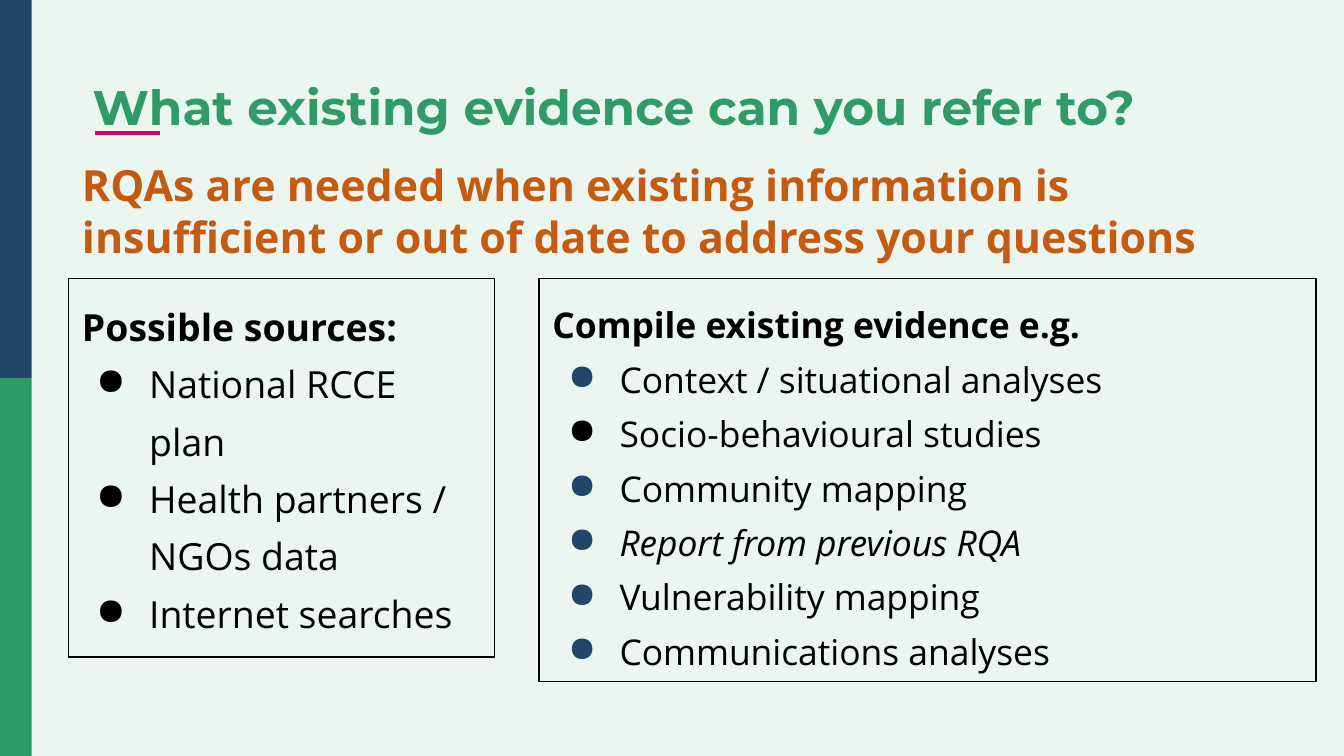
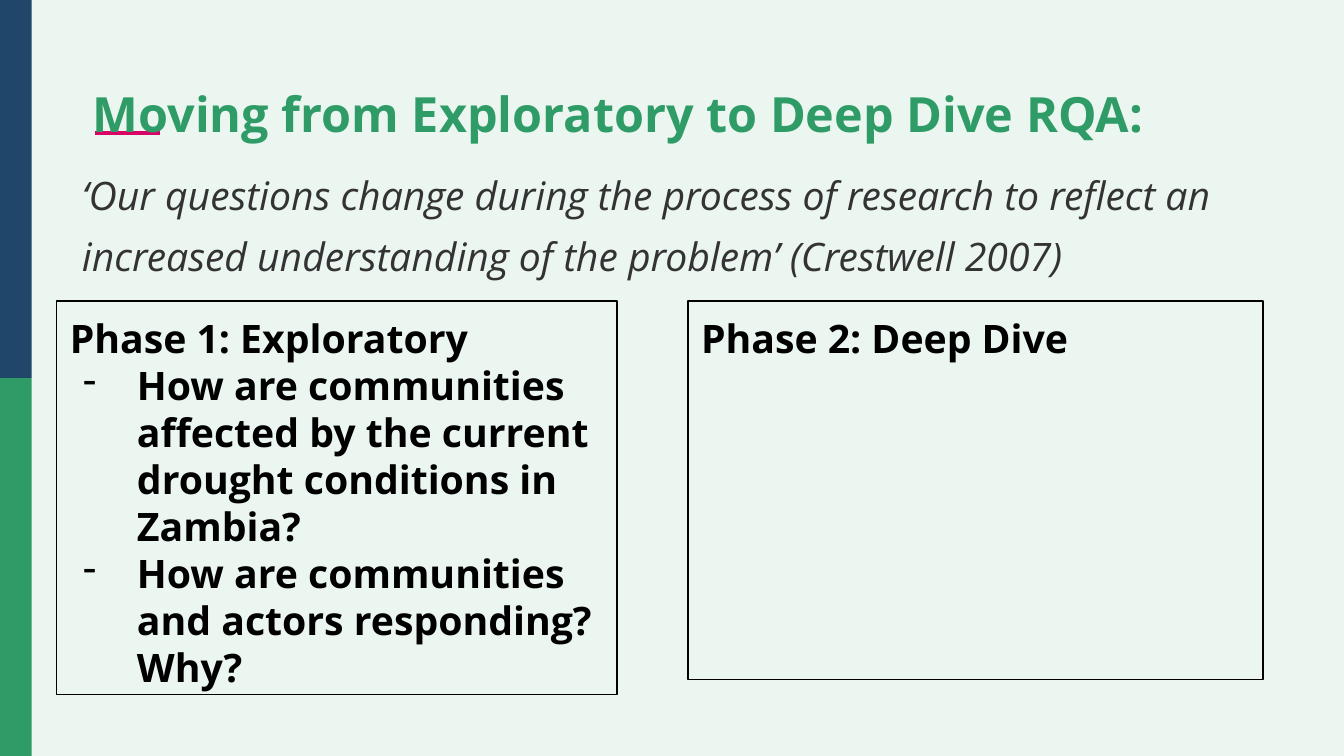
from dataclasses import dataclass

from lxml.etree import SubElement
from pptx import Presentation
from pptx.dml.color import RGBColor
from pptx.enum.shapes import MSO_CONNECTOR, MSO_SHAPE
from pptx.enum.text import MSO_ANCHOR, PP_ALIGN
from pptx.oxml.ns import qn
from pptx.util import Cm, Pt

COLOURS = {
    "mint": "ECF6F1",
    "navy": "204669",
    "green": "2F9C67",
    "pink": "D90368",
    "orange": "C55A11",
    "grey": "333333",
    "black": "000000",
}
BODY_FONT = "Open Sans"
TITLE_FONT = "Montserrat"
PAGE_WIDTH, PAGE_HEIGHT = 25.4, 14.29
BAND_WIDTH = 0.6
INDENT = 1.27
LOOSE = 1.28


@dataclass(frozen=True)
class Place:
    """Left, top, width and height in centimetres."""
    left: float
    top: float
    width: float
    height: float

    def lengths(self) -> list:
        return [Cm(n) for n in (self.left, self.top, self.width, self.height)]


@dataclass(frozen=True)
class Style:
    size: float
    colour: str = "black"
    font: str = BODY_FONT
    bold: bool = False
    italic: bool = False
    spacing: float = 1.0


@dataclass(frozen=True)
class Item:
    text: str
    italic: bool = False
    bullet_colour: str = "black"


@dataclass(frozen=True)
class Panel:
    place: Place
    heading: str
    size: float
    items: tuple = ()
    bullet: str = "●"
    hanging: float = 1.0
    bold_items: bool = False
    spacing: float = 1.0


@dataclass(frozen=True)
class Page:
    title: str
    title_style: Style
    lead: str
    lead_style: Style
    panels: tuple


TITLE_PLACE = Place(1.75, 1.45, 21.9, 1.96)
LEAD_PLACE = Place(1.3, 2.87, 22.28, 2.24)

PAGES = (
    Page(
        "What existing evidence can you refer to?",
        Style(26, "green", TITLE_FONT, bold=True, spacing=0.9),
        "RQAs are needed when existing information is insufficient "
        "or out of date to address your questions",
        Style(23, "orange", bold=True),
        (
            Panel(
                Place(1.3, 5.26, 8.05, 7.16), "Possible sources:", 20,
                (
                    Item("National RCCE plan"),
                    Item("Health partners / NGOs data"),
                    Item("Internet searches"),
                ),
                spacing=LOOSE,
            ),
            Panel(
                Place(10.19, 5.26, 14.68, 7.62), "Compile existing evidence e.g.", 19,
                (
                    Item("Context / situational analyses", bullet_colour="navy"),
                    Item("Socio-behavioural studies"),
                    Item("Community mapping", bullet_colour="navy"),
                    Item("Report from previous RQA", True, "navy"),
                    Item("Vulnerability mapping", bullet_colour="navy"),
                    Item("Communications analyses", bullet_colour="navy"),
                ),
                hanging=0.97, spacing=LOOSE,
            ),
        ),
    ),
    Page(
        "Moving from Exploratory to Deep Dive RQA:",
        Style(26, "green", bold=True),
        "‘Our questions change during the process of research to reflect an "
        "increased understanding of the problem’ (Crestwell 2007)",
        Style(21, "grey", italic=True, spacing=LOOSE),
        (
            Panel(
                Place(1.07, 5.69, 10.59, 7.44), "Phase 1: Exploratory", 21,
                (
                    Item("How are communities affected by the current "
                         "drought conditions in Zambia?"),
                    Item("How are communities and actors responding? Why?"),
                ),
                bullet="-", hanging=1.02, bold_items=True,
            ),
            Panel(Place(13, 5.69, 10.87, 7.16), "Phase 2: Deep Dive", 21),
        ),
    ),
)


def colour(name: str) -> RGBColor:
    return RGBColor.from_string(COLOURS[name])


def write(para, text: str, style: Style) -> None:
    para.alignment = PP_ALIGN.LEFT
    para.line_spacing = style.spacing
    span = para.add_run()
    span.text = text
    span.font.name = style.font
    span.font.size = Pt(style.size)
    span.font.bold = style.bold
    span.font.italic = style.italic
    span.font.color.rgb = colour(style.colour)


def add_bullet(para, mark: str, mark_colour: str, hanging: float) -> None:
    properties = para._p.get_or_add_pPr()
    properties.set("marL", str(Cm(INDENT)))
    properties.set("indent", str(-Cm(hanging)))
    fill = SubElement(properties, qn("a:buClr"))
    SubElement(fill, qn("a:srgbClr")).set("val", COLOURS[mark_colour])
    SubElement(properties, qn("a:buChar")).set("char", mark)


def set_frame(frame, left: float, top: float) -> None:
    frame.word_wrap = True
    frame.vertical_anchor = MSO_ANCHOR.TOP
    frame.margin_left, frame.margin_right = Cm(left), Cm(0.25)
    frame.margin_top = frame.margin_bottom = Cm(top)


def add_text(page, place: Place, text: str, style: Style, inset: float) -> None:
    box = page.shapes.add_textbox(*place.lengths())
    set_frame(box.text_frame, inset, 0.13)
    write(box.text_frame.paragraphs[0], text, style)


def add_rectangle(page, place: Place):
    box = page.shapes.add_shape(MSO_SHAPE.RECTANGLE, *place.lengths())
    box.shadow.inherit = False
    return box


def add_panel(page, panel: Panel) -> None:
    box = add_rectangle(page, panel.place)
    box.fill.background()
    box.line.color.rgb = colour("black")
    box.line.width = Pt(0.75)
    frame = box.text_frame
    set_frame(frame, 0.25, 0.25)
    write(frame.paragraphs[0], panel.heading,
          Style(panel.size, bold=True, spacing=panel.spacing))
    for item in panel.items:
        para = frame.add_paragraph()
        add_bullet(para, panel.bullet, item.bullet_colour, panel.hanging)
        write(para, item.text, Style(panel.size, bold=panel.bold_items,
                                     italic=item.italic, spacing=panel.spacing))


def add_frame(page) -> None:
    """Background, side bands and title accent shared by all slides."""
    page.background.fill.solid()
    page.background.fill.fore_color.rgb = colour("mint")
    half = PAGE_HEIGHT / 2
    for index, name in enumerate(("navy", "green")):
        band = add_rectangle(page, Place(0, index * half, BAND_WIDTH, half))
        band.fill.solid()
        band.fill.fore_color.rgb = colour(name)
        band.line.fill.background()
    accent = page.shapes.add_connector(
        MSO_CONNECTOR.STRAIGHT, Cm(1.8), Cm(2.51), Cm(3.02), Cm(2.51))
    accent.line.color.rgb = colour("pink")
    accent.line.width = Pt(2.25)
    SubElement(accent._element.spPr, qn("a:effectLst"))


def main() -> None:
    deck = Presentation()
    deck.slide_width, deck.slide_height = Cm(PAGE_WIDTH), Cm(PAGE_HEIGHT)
    for content in PAGES:
        page = deck.slides.add_slide(deck.slide_layouts[6])
        add_frame(page)
        # Title and lead sentence
        add_text(page, TITLE_PLACE, content.title, content.title_style, 0)
        add_text(page, LEAD_PLACE, content.lead, content.lead_style, 0.25)
        # Outlined panels
        for panel in content.panels:
            add_panel(page, panel)
    deck.save("out.pptx")


if __name__ == "__main__":
    main()
